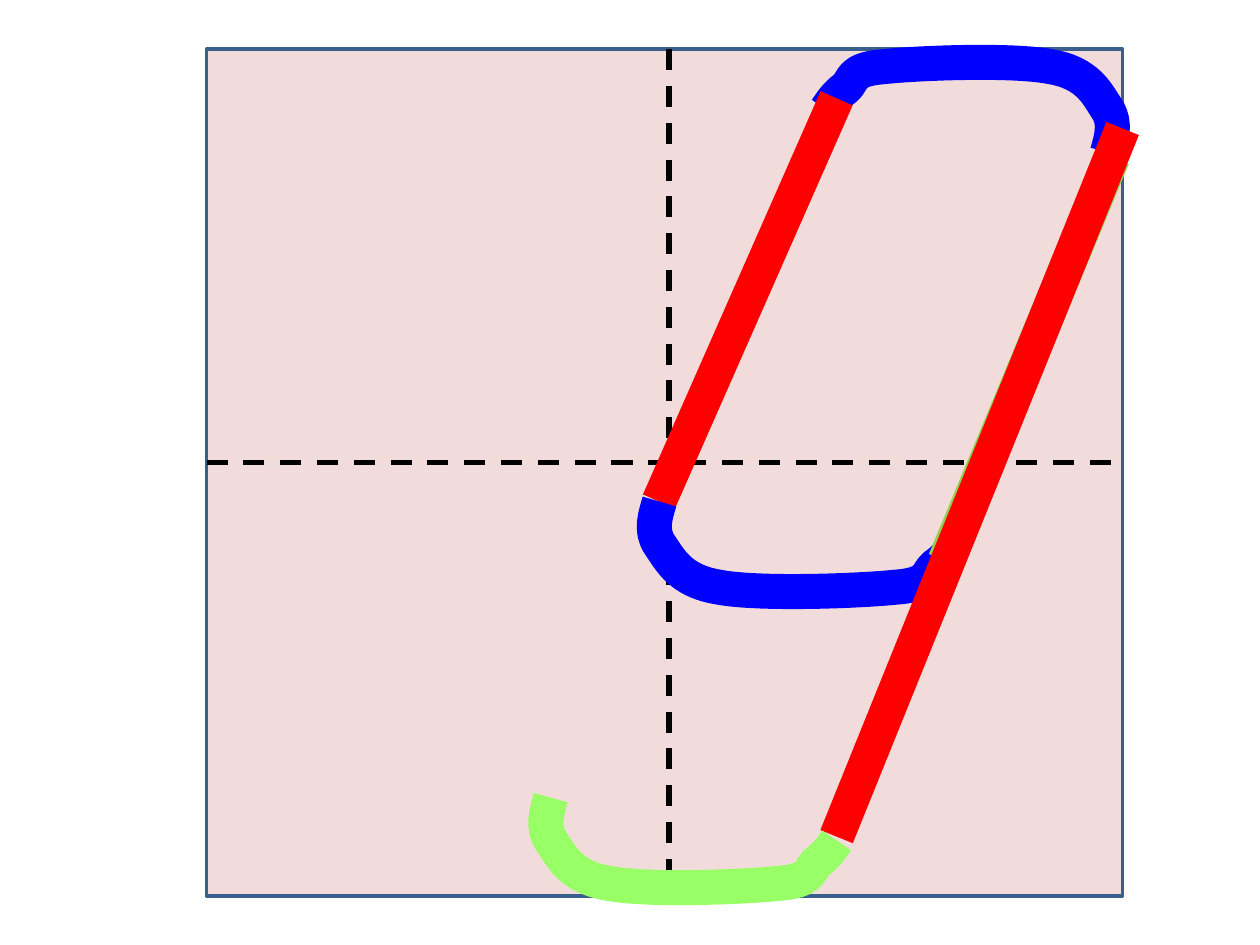
from lxml import etree
from pptx import Presentation
from pptx.dml.color import RGBColor
from pptx.enum import dml, shapes
from pptx.oxml import ns
from pptx.util import Inches, Pt

COLORS = {
    "paper": "F2DCDB",
    "border": "3A5F8C",
    "guide": "000000",
    "arc": "0000FF",
    "stem": "FF0000",
    "join": "92D050",
    "tail": "99FF66",
}
STROKE = 20

# Start point, then three points for each Bezier segment, in a 2.3 x 0.74 box
ARC_SIZE = (2.3, 0.74)
ARC_POINTS = [
    (0, 0.4),
    (0.04, 0.34), (0.08, 0.28), (0.15, 0.23),
    (0.22, 0.17), (0.18, 0.08), (0.45, 0.06),
    (0.72, 0.03), (1.48, 0), (1.78, 0.06),
    (2.08, 0.11), (2.15, 0.28), (2.23, 0.4),
    (2.3, 0.51), (2.26, 0.63), (2.23, 0.74),
]


def set_line(shape, color, width):
    shape.line.color.rgb = RGBColor.from_string(COLORS[color])
    shape.line.width = Pt(width)


def add_line(slide, start, end, color, width=STROKE):
    line = slide.shapes.add_connector(
        shapes.MSO_CONNECTOR.STRAIGHT, *(Inches(value) for value in start + end))
    set_line(line, color, width)
    etree.SubElement(line._element.spPr, ns.qn("a:effectLst"))
    return line


def add_arc(slide, left, top, width, height, color, rotation=0):
    """Draw the curved stroke of the letter, scaled to the given box."""
    points = [(Inches(left + x * width / ARC_SIZE[0]),
               Inches(top + y * height / ARC_SIZE[1])) for x, y in ARC_POINTS]
    builder = slide.shapes.build_freeform(*points[0])
    builder.add_line_segments(points[1:], close=False)
    arc = builder.convert_to_shape()

    # Join each three straight segments into one cubic curve
    segments = list(arc._element.iter(ns.qn("a:lnTo")))
    for first in range(0, len(segments), 3):
        curve = etree.Element(ns.qn("a:cubicBezTo"))
        segments[first].addprevious(curve)
        for segment in segments[first:first + 3]:
            curve.append(segment[0])
            segment.getparent().remove(segment)

    arc.fill.background()
    arc.shadow.inherit = False
    set_line(arc, color, STROKE)
    arc.rotation = rotation


def add_writing_square(slide, left, top, width, height):
    square = slide.shapes.add_shape(
        shapes.MSO_SHAPE.RECTANGLE,
        Inches(left), Inches(top), Inches(width), Inches(height))
    square.fill.solid()
    square.fill.fore_color.rgb = RGBColor.from_string(COLORS["paper"])
    square.shadow.inherit = False
    set_line(square, "border", 2)

    middle_x, middle_y = left + 3.67, top + 3.28
    for start, end in (
        ((left, middle_y), (left + width, middle_y)),
        ((middle_x, top), (middle_x, top + height - 0.08)),
    ):
        guide = add_line(slide, start, end, "guide", 3)
        guide.line.dash_style = dml.MSO_LINE.DASH


def add_letter(slide, left, top):
    """Draw the slanted letter, back to front, from its top left corner."""
    def at(x, y):
        return left + x, top + y

    add_arc(slide, *at(2.26, 0), 2.3, 0.74, "arc")
    add_line(slide, at(2.34, 0.31), at(0.93, 3.51), "stem")
    add_arc(slide, *at(0.86, 3.51), 2.42, 0.74, "arc", rotation=180)
    add_line(slide, at(4.53, 0.78), at(3.2, 3.98), "join")
    add_line(slide, at(4.61, 0.55), at(2.34, 6.17), "stem")
    add_arc(slide, *at(0, 5.86), 2.34, 0.74, "tail", rotation=180)


def main():
    presentation = Presentation()
    presentation.slide_width = Inches(10)
    presentation.slide_height = Inches(7.5)
    slide = presentation.slides.add_slide(presentation.slide_layouts[6])
    add_writing_square(slide, 1.64, 0.39, 7.27, 6.72)
    add_letter(slide, 4.3, 0.47)
    presentation.save("out.pptx")


if __name__ == "__main__":
    main()
